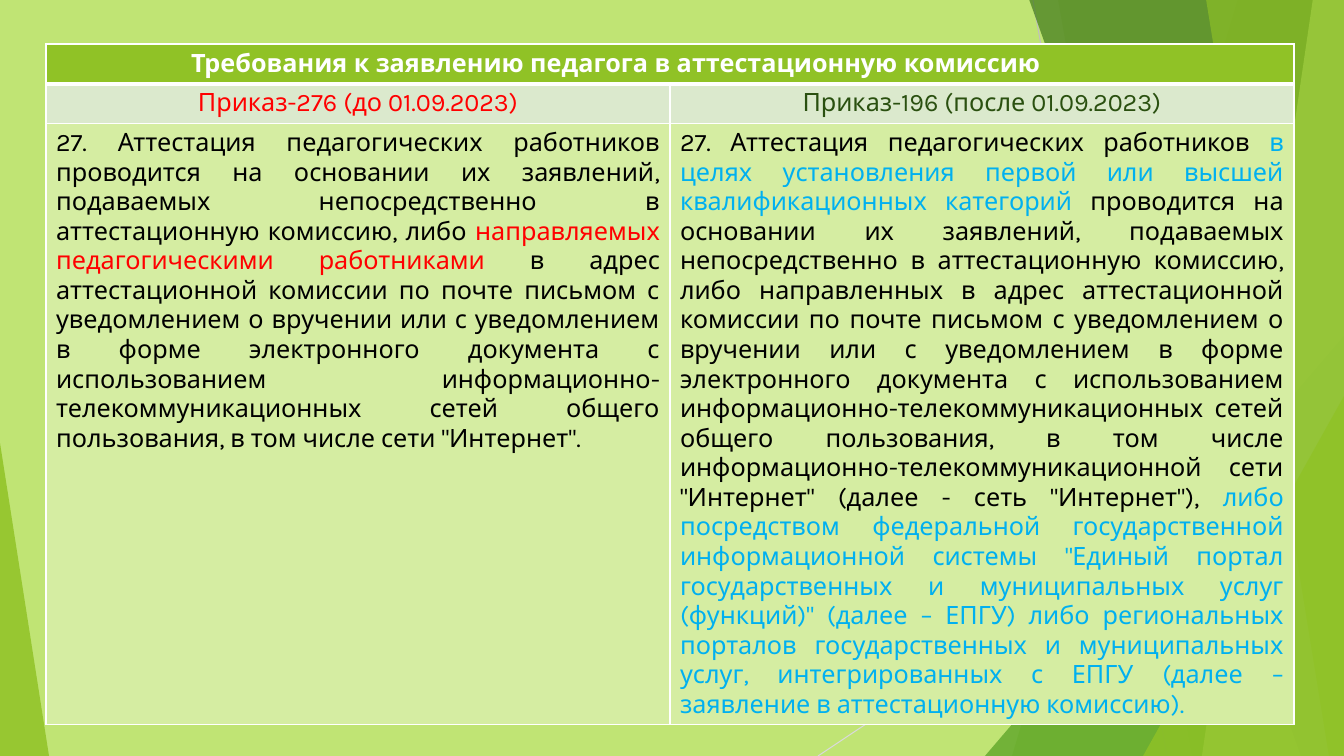
from dataclasses import dataclass

from lxml import etree
from pptx import Presentation
from pptx.dml.color import RGBColor
from pptx.enum.shapes import MSO_CONNECTOR, MSO_SHAPE
from pptx.enum.text import PP_ALIGN
from pptx.oxml.ns import qn
from pptx.util import Emu, Pt

STRAIGHT = MSO_CONNECTOR.STRAIGHT
TRIANGLE = MSO_SHAPE.ISOSCELES_TRIANGLE
CENTER, JUSTIFY = PP_ALIGN.CENTER, PP_ALIGN.JUSTIFY

WIDTH, HEIGHT = 1344, 756
SCALE = 12192000 / WIDTH
FONT, TEXT_SIZE = "Karla", 18
COLORS = {
    "background": "C0E474", "lime": "90C226", "green": "54A021", "forest": "3F7819",
    "dark_green": "2A5010", "gray": "BFBFBF", "light_gray": "D9D9D9",
    "subhead": "DBE9CD", "body": "D5EDA2", "white": "FFFFFF", "black": "000000",
    "red": "FF0000", "blue": "00B0F0",
}


@dataclass
class Ray:
    start: tuple[int, int]
    end: tuple[int, int]
    color: str


@dataclass
class Facet:
    """Area from a slanted edge to the right side of the slide."""
    top_x: int
    bottom_x: int
    color: str
    opacity: int


@dataclass
class Corner:
    """Triangle standing on the lower edge; apex is 0 (left) or 1 (right)."""
    left: int
    top: int
    width: int
    apex: int
    color: str
    opacity: int


@dataclass
class Piece:
    text: str
    color: str
    bold: bool = False


@dataclass
class Entry:
    row: int
    column: int
    fill: str
    align: PP_ALIGN
    pieces: list[Piece]


RAYS = [
    Ray((1033, 0), (1167, HEIGHT), "gray"),
    Ray((WIDTH, 406), (818, HEIGHT), "light_gray"),
]
BACKDROP = [
    Facet(1238, 1012, "lime", 30),
    Facet(1058, 1192, "lime", 20),
    Corner(985, 336, 359, 1, "green", 72),
    Facet(1029, 1301, "forest", 70),
    Facet(1313, 1202, "background", 70),
    Facet(1206, 1329, "lime", 65),
    Corner(1143, 396, 201, 1, "lime", 80),
    Corner(0, 443, 49, 0, "lime", 85),
]
COLUMN_WIDTH = 624
ROW_HEIGHTS = [39, 39, 584]
HEADING_RIGHT_MARGIN = 118
ENTRIES = [
    Entry(0, 0, "lime", CENTER, [
        Piece("Требования к заявлению педагога в аттестационную комиссию", "white", True)]),
    Entry(1, 0, "subhead", CENTER, [Piece("Приказ-276 (до 01.09.2023)", "red")]),
    Entry(1, 1, "subhead", CENTER, [Piece("Приказ-196 (после 01.09.2023)", "dark_green")]),
    Entry(2, 0, "body", JUSTIFY, [
        Piece("27. Аттестация педагогических работников проводится на основании их заявлений, "
              "подаваемых непосредственно в аттестационную комиссию, либо ", "black"),
        Piece("направляемых педагогическими работниками", "red"),
        Piece(" в адрес аттестационной комиссии по почте письмом с уведомлением о вручении "
              "или с уведомлением в форме электронного документа с использованием "
              "информационно-телекоммуникационных сетей общего пользования, "
              "в том числе сети \"Интернет\".", "black")]),
    Entry(2, 1, "body", JUSTIFY, [
        Piece("27. Аттестация педагогических работников ", "black"),
        Piece("в целях установления первой или высшей квалификационных категорий ", "blue"),
        Piece("проводится на основании их заявлений, подаваемых непосредственно в "
              "аттестационную комиссию, либо направленных в адрес аттестационной комиссии "
              "по почте письмом с уведомлением о вручении или с уведомлением в форме "
              "электронного документа с использованием информационно-телекоммуникационных "
              "сетей общего пользования, в том числе информационно-телекоммуникационной "
              "сети \"Интернет\" (далее - сеть \"Интернет\"), ", "black"),
        Piece("либо посредством федеральной государственной информационной системы "
              "\"Единый портал государственных и муниципальных услуг (функций)\" "
              "(далее – ЕПГУ) либо региональных порталов государственных и муниципальных "
              "услуг, интегрированных с ЕПГУ (далее – заявление в аттестационную "
              "комиссию).", "blue")]),
]


def px(length: int) -> Emu:
    return Emu(round(length * SCALE))


def rgb(name: str) -> RGBColor:
    return RGBColor.from_string(COLORS[name])


def draw_ray(shapes, ray: Ray) -> None:
    line = shapes.add_connector(STRAIGHT, *map(px, ray.start + ray.end))
    line.line.color.rgb = rgb(ray.color)
    line.line.width = Pt(0.75)
    etree.SubElement(line._element.spPr, qn("a:effectLst"))


def draw_backdrop(shapes, part: Facet | Corner) -> None:
    if isinstance(part, Facet):
        outline = shapes.build_freeform(part.top_x, -1, scale=SCALE)
        outline.add_line_segments([(WIDTH, -1), (WIDTH, HEIGHT), (part.bottom_x, HEIGHT)])
        shape = outline.convert_to_shape()
    else:
        shape = shapes.add_shape(TRIANGLE, px(part.left), px(part.top),
                                 px(part.width), px(HEIGHT - part.top))
        shape.adjustments[0] = part.apex
    shape.shadow.inherit = False
    shape.line.fill.background()
    shape.fill.solid()
    shape.fill.fore_color.rgb = rgb(part.color)
    color = shape._element.spPr.find(qn("a:solidFill"))[0]
    etree.SubElement(color, qn("a:alpha"), val=str(part.opacity * 1000))


def add_borders(cell, row: int) -> None:
    """White rules, with a thicker one under the heading."""
    properties = cell._tc.get_or_add_tcPr()
    widths = {"lnL": 1, "lnR": 1, "lnT": 3 if row == 1 else 1, "lnB": 3 if row == 0 else 1}
    for side, width in widths.items():
        border = etree.SubElement(properties, qn(f"a:{side}"), w=str(Pt(width)))
        fill = etree.SubElement(border, qn("a:solidFill"))
        etree.SubElement(fill, qn("a:srgbClr"), val=COLORS["white"])


def fill_cell(cell, entry: Entry) -> None:
    cell.fill.solid()
    cell.fill.fore_color.rgb = rgb(entry.fill)
    paragraph = cell.text_frame.paragraphs[0]
    paragraph.alignment = entry.align
    for piece in entry.pieces:
        run = paragraph.add_run()
        run.text = piece.text
        run.font.name = FONT
        run.font.size = Pt(TEXT_SIZE)
        run.font.bold = piece.bold
        run.font.color.rgb = rgb(piece.color)


def draw_comparison(shapes) -> None:
    table = shapes.add_table(len(ROW_HEIGHTS), 2, px(46), px(44),
                             px(2 * COLUMN_WIDTH), px(sum(ROW_HEIGHTS))).table
    for column in table.columns:
        column.width = px(COLUMN_WIDTH)
    for index, height in enumerate(ROW_HEIGHTS):
        table.rows[index].height = px(height)
        for cell in table.rows[index].cells:
            add_borders(cell, index)
    heading = table.cell(0, 0)
    heading.merge(table.cell(0, 1))
    heading.margin_right = px(HEADING_RIGHT_MARGIN)
    for entry in ENTRIES:
        fill_cell(table.cell(entry.row, entry.column), entry)


def main() -> None:
    deck = Presentation()
    deck.slide_width, deck.slide_height = px(WIDTH), px(HEIGHT)
    slide = deck.slides.add_slide(deck.slide_layouts[6])
    slide.background.fill.solid()
    slide.background.fill.fore_color.rgb = rgb("background")
    for ray in RAYS:
        draw_ray(slide.shapes, ray)
    for part in BACKDROP:
        draw_backdrop(slide.shapes, part)
    draw_comparison(slide.shapes)
    deck.save("out.pptx")


if __name__ == "__main__":
    main()
